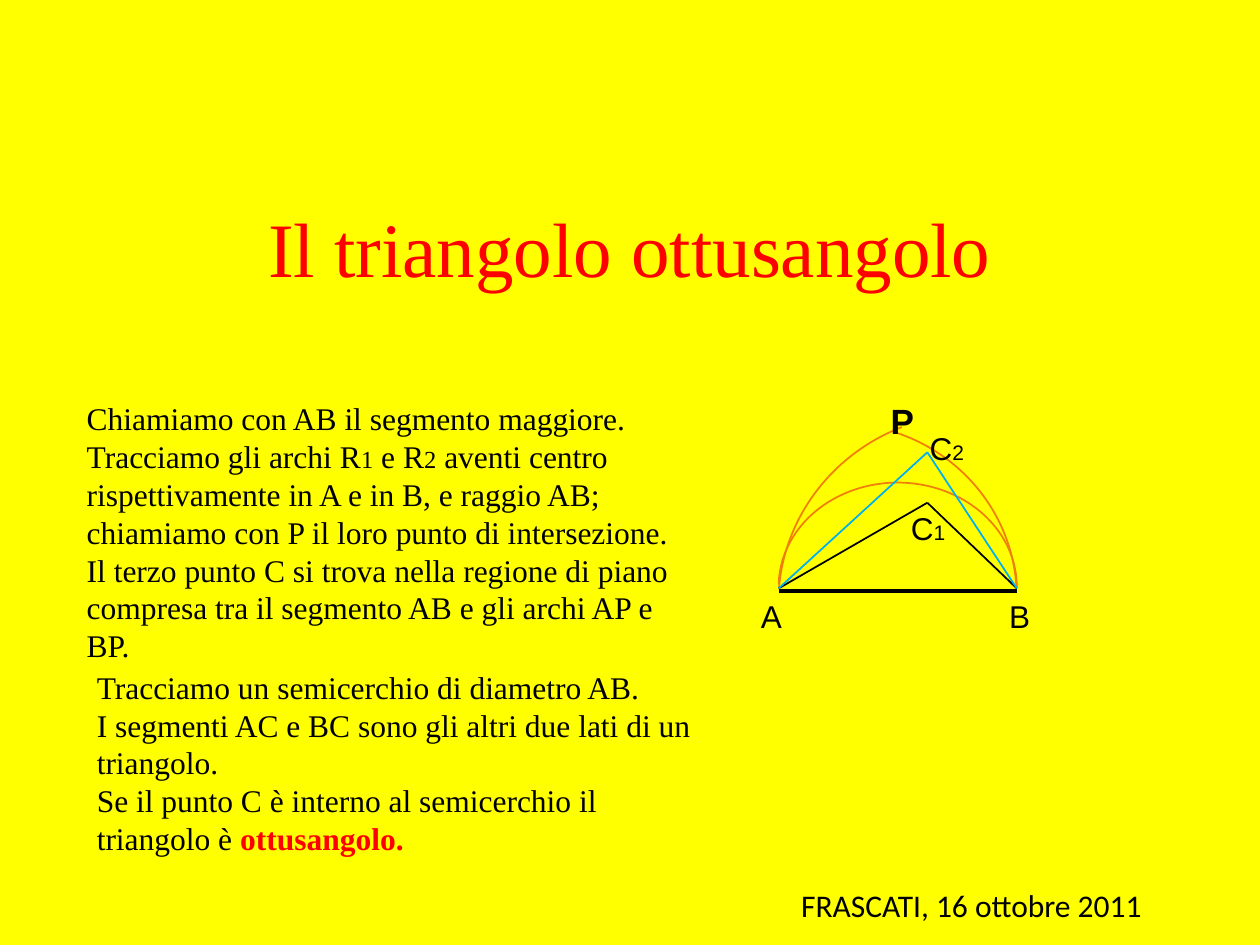
"""Builds the slide on the obtuse triangle, with its drawing and text."""
import pptx
import pptx.util
import pptx.dml.color
import pptx.enum.shapes
import pptx.enum.text
import pptx.oxml

Inches, Pt = pptx.util.Inches, pptx.util.Pt
BLACK, RED, ORANGE, BLUE = "000000", "FF0000", "F07F09", "00B0F0"
SERIF = "Times New Roman"

TITLE = "Il triangolo ottusangolo"
INTRO = [
    [("Chiamiamo con AB il segmento maggiore.",)],
    [("Tracciamo gli archi R",), ("1", 14), (" e R",), ("2", 14),
     (" aventi centro rispettivamente in A e in B, e raggio AB; "
      "chiamiamo con P il loro punto di intersezione.",)],
    [("Il terzo punto C si trova nella regione di piano compresa tra "
      "il segmento AB e gli archi AP e BP.",)],
]
RULE = [
    [("Tracciamo un semicerchio di diametro AB.",)],
    [("I segmenti AC e BC sono gli altri due lati di un triangolo.",)],
    [("Se il punto C è interno al semicerchio il triangolo è ",),
     ("ottusangolo.", 18, RED, True)],
]
TEXTS = [
    ((0.59, 3.12, 5.04, 2.22), SERIF, INTRO),
    ((5.94, 4.69, 0.39, 0.4), "Arial", [[("A",)]]),
    ((7.91, 4.69, 0.39, 0.4), "Arial", [[("B",)]]),
    ((6.97, 3.12, 0.39, 0.44), "Arial", [[("P", 20, BLACK, True)]]),
    ((7.13, 3.99, 0.55, 0.4), "Arial", [[("C",), ("1", 12)]]),
    ((7.28, 3.36, 0.55, 0.4), "Arial", [[("C",), ("2", 12)]]),
    ((6.26, 6.98, 3.07, 0.4), "Calibri", [[("FRASCATI, 16 ottobre 2011",)]]),
    ((0.67, 5.25, 5.04, 1.62), SERIF, RULE),
]
ARCS = [
    ((6.18, 3.83, 1.89, 1.65), (108.68, 0.43), 0),
    ((5.24, 3.36, 2.83, 2.76), (172.92, 213.8), 0),
    ((6.23, 3.23, 2.95, 3.06), (172.41, 211.29), 256.1),
]
LEFT, RIGHT, BASE, FOOT = 6.18, 8.07, 4.69, 4.67
PEAKS = [((7.36, 3.99), BLACK), ((7.36, 3.59), BLUE)]


def color(text):
    return pptx.dml.color.RGBColor.from_string(text)


def write(para, font, text, size=18, tint=BLACK, bold=False):
    run = para.add_run()
    run.text = text
    run.font.name, run.font.size, run.font.bold = font, Pt(size), bold
    run.font.color.rgb = color(tint)


def add_text(slide, box, font, paras):
    frame = slide.shapes.add_textbox(*map(Inches, box)).text_frame
    frame.word_wrap = True
    for i, runs in enumerate(paras):
        para = frame.add_paragraph() if i else frame.paragraphs[0]
        for run in runs:
            write(para, font, *run)


def add_arc(slide, box, ends, turn):
    kind = pptx.enum.shapes.MSO_SHAPE.ARC
    arc = slide.shapes.add_shape(kind, *map(Inches, box))
    arc.adjustments[0], arc.adjustments[1] = ends
    arc.rotation = turn
    arc.shadow.inherit = False
    arc.fill.background()
    arc.line.color.rgb = color(ORANGE)
    arc.line.width = Pt(1)


def add_line(slide, start, end, tint, width=1):
    kind = pptx.enum.shapes.MSO_CONNECTOR.STRAIGHT
    line = slide.shapes.add_connector(kind, *map(Inches, start + end))
    line.line.color.rgb = color(tint)
    line.line.width = Pt(width)
    props = line._element.spPr
    props.append(pptx.oxml.parse_xml(
        '<a:effectLst xmlns:a='
        '"http://schemas.openxmlformats.org/drawingml/2006/main"/>'))


def add_title(slide):
    title = slide.shapes.title
    title.left, title.top, title.width, title.height = map(
        Inches, (0.75, 1.15, 8.5, 1.61))
    frame = title.text_frame
    frame.vertical_anchor = pptx.enum.text.MSO_ANCHOR.MIDDLE
    para = frame.paragraphs[0]
    para.alignment = pptx.enum.text.PP_ALIGN.CENTER
    write(para, SERIF, TITLE, 44, RED)


def main():
    deck = pptx.Presentation()
    deck.slide_width, deck.slide_height = Inches(10), Inches(7.5)
    slide = deck.slides.add_slide(deck.slide_layouts[5])
    slide.background.fill.solid()
    slide.background.fill.fore_color.rgb = color("FFFF00")
    add_title(slide)
    add_line(slide, (LEFT, BASE), (RIGHT, BASE), BLACK, 2)
    for arc in ARCS:
        add_arc(slide, *arc)
    for peak, tint in PEAKS:
        for side in (LEFT, RIGHT):
            add_line(slide, peak, (side, FOOT), tint)
    for text in TEXTS:
        add_text(slide, *text)
    deck.save("out.pptx")


if __name__ == "__main__":
    main()
